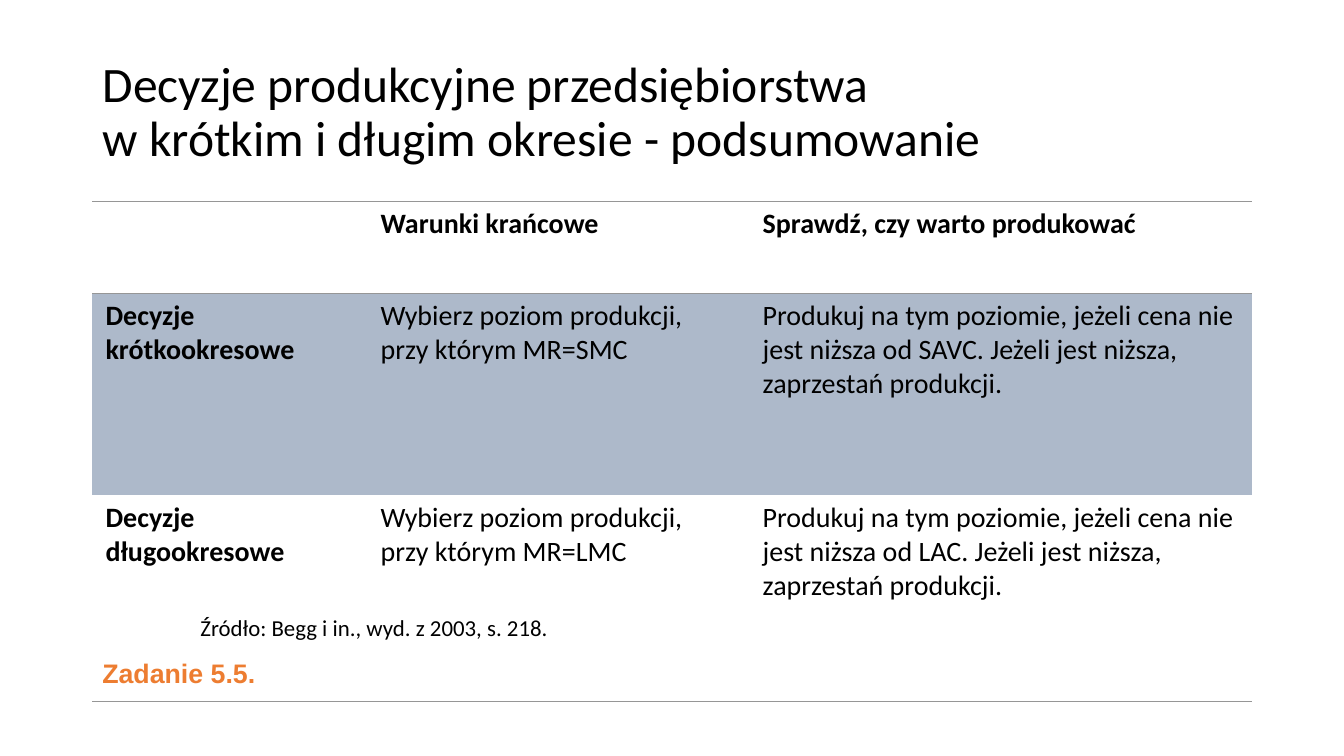
import pptx
import pptx.dml.color
import pptx.enum.text
import pptx.oxml
import pptx.oxml.ns
import pptx.util
from pptx.util import Cm

BLACK = pptx.dml.color.RGBColor(0x00, 0x00, 0x00)
ORANGE = pptx.dml.color.RGBColor(0xED, 0x7D, 0x31)
BAND = pptx.dml.color.RGBColor(0xAD, 0xB9, 0xCA)
RULE = pptx.dml.color.RGBColor(0x96, 0x96, 0x96)

LEFT, WIDTH = Cm(2.33), Cm(29.21)
COLUMN_WIDTHS = [Cm(6.93), Cm(9.63), Cm(12.65)]
ROW_HEIGHTS = [Cm(2.32), Cm(5.08), Cm(5.19)]
DECISIONS = [
    ["", "Warunki krańcowe", "Sprawdź, czy warto produkować"],
    ["Decyzje krótkookresowe",
     "Wybierz poziom produkcji, przy którym MR=SMC",
     "Produkuj na tym poziomie, jeżeli cena nie jest niższa od SAVC. "
     "Jeżeli jest niższa, zaprzestań produkcji."],
    ["Decyzje długookresowe",
     "Wybierz poziom produkcji, przy którym MR=LMC",
     "Produkuj na tym poziomie, jeżeli cena nie jest niższa od LAC. "
     "Jeżeli jest niższa, zaprzestań produkcji."],
]


class SlideBuilder:
    """Holds the text style and the current slide."""

    def __init__(self, slide, font_name="Calibri", color=BLACK):
        self.slide = slide
        self.font_name = font_name
        self.color = color

    def set_text(self, text_frame, text, size, bold=False, font_name=None, color=None):
        text_frame.text = text
        paragraph = text_frame.paragraphs[0]
        font = paragraph.font
        font.name = font_name or self.font_name
        font.size = pptx.util.Pt(size)
        font.bold = bold
        font.color.rgb = color or self.color
        return paragraph

    def title(self, text, top, height, size):
        shape = self.slide.shapes.title
        shape.left, shape.top, shape.width, shape.height = LEFT, top, WIDTH, height
        shape.text_frame.vertical_anchor = pptx.enum.text.MSO_ANCHOR.MIDDLE
        paragraph = self.set_text(shape.text_frame, text, size)
        paragraph.alignment = pptx.enum.text.PP_ALIGN.LEFT
        paragraph.line_spacing = 0.9

    def label(self, text, left, top, width, height, size, **style):
        shape = self.slide.shapes.add_textbox(left, top, width, height)
        shape.text_frame.word_wrap = False
        shape.text_frame.auto_size = pptx.enum.text.MSO_AUTO_SIZE.SHAPE_TO_FIT_TEXT
        self.set_text(shape.text_frame, text, size, **style)

    def border(self, cell, side, color=None):
        namespace = pptx.oxml.ns.nsdecls("a")
        fill = (f'<a:solidFill><a:srgbClr val="{color}"/></a:solidFill>'
                if color else "<a:noFill/>")
        line = f'<a:{side} {namespace} w="12700">{fill}</a:{side}>'
        cell._tc.get_or_add_tcPr().append(pptx.oxml.parse_xml(line))

    def table(self, rows, top, size):
        table = self.slide.shapes.add_table(
            len(rows), len(rows[0]), LEFT, top, WIDTH, sum(ROW_HEIGHTS)).table
        table.first_row = table.horz_banding = False
        for column, width in zip(table.columns, COLUMN_WIDTHS):
            column.width = width
        for row, height in zip(table.rows, ROW_HEIGHTS):
            row.height = height
        last = len(rows) - 1
        for i, texts in enumerate(rows):
            # Rules run above and below the header and under the last row
            ruled = {"lnT": i <= 1, "lnB": i in (0, last)}
            for j, text in enumerate(texts):
                cell = table.cell(i, j)
                cell.margin_left = cell.margin_right = Cm(0.33)
                for side in ("lnL", "lnR", "lnT", "lnB"):
                    self.border(cell, side, RULE if ruled.get(side) else None)
                if i == 1:
                    cell.fill.solid()
                    cell.fill.fore_color.rgb = BAND
                else:
                    cell.fill.background()
                self.set_text(cell.text_frame, text, size, bold=i == 0 or j == 0)


def main():
    presentation = pptx.Presentation()
    presentation.slide_width, presentation.slide_height = Cm(33.87), Cm(19.05)
    title_only = presentation.slide_layouts[5]
    builder = SlideBuilder(presentation.slides.add_slide(title_only))

    # Heading
    builder.title("Decyzje produkcyjne przedsiębiorstwa \v"
                  "w krótkim i długim okresie - podsumowanie",
                  Cm(1.02), Cm(3.68), 35.4)

    # Summary of decisions
    builder.table(DECISIONS, Cm(5.08), 20)

    # Exercise and source
    builder.label("Zadanie 5.5.", LEFT, Cm(16.43), Cm(4.42), Cm(1.09), 19.1,
                  bold=True, font_name="Arial", color=ORANGE)
    builder.label("Źródło: Begg i in., wyd. z 2003, s. 218.",
                  Cm(4.8), Cm(15.34), Cm(9.37), Cm(0.97), 16.3)

    presentation.save("out.pptx")


if __name__ == "__main__":
    main()
